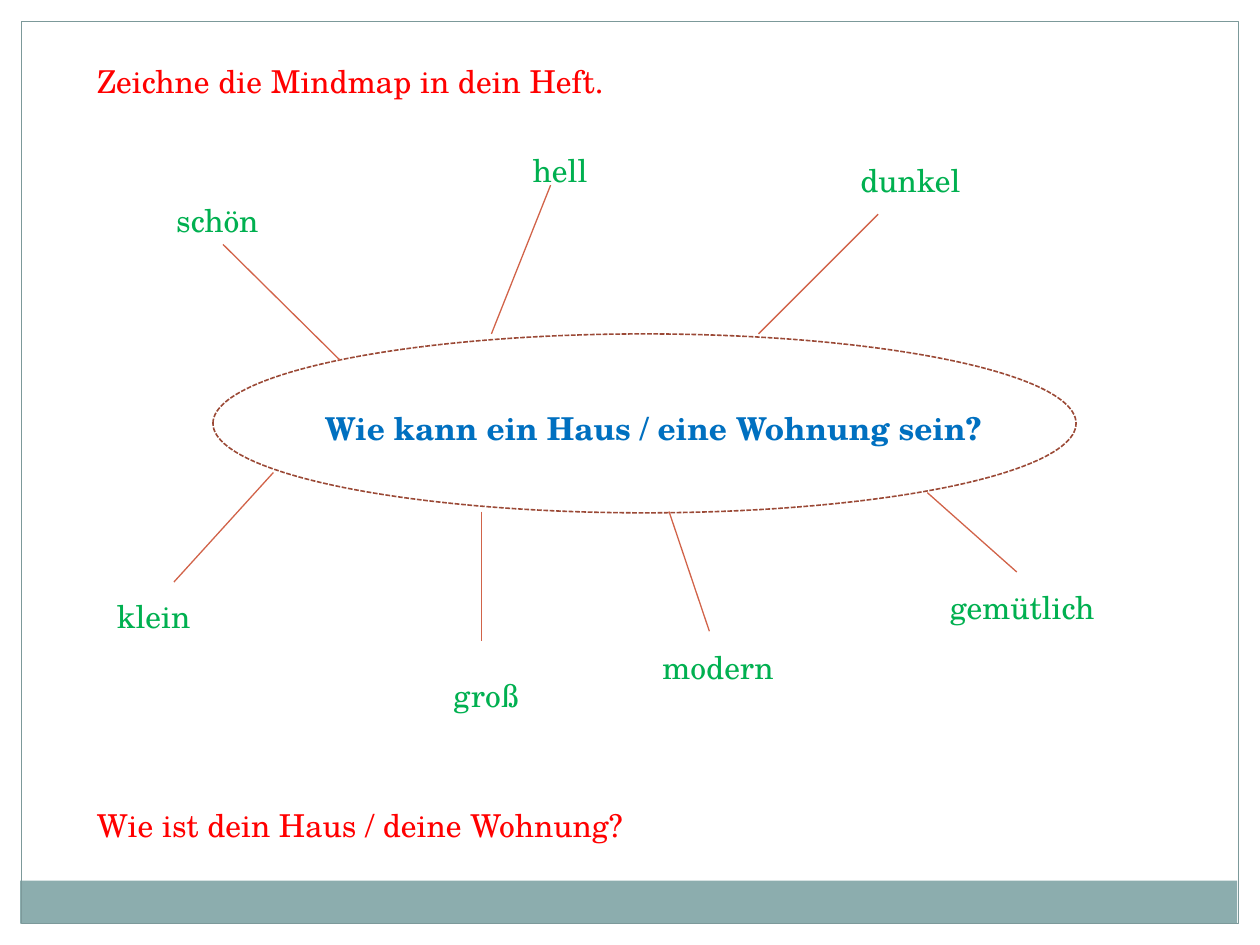
from pptx import Presentation
from pptx import util as u
from pptx.dml.color import RGBColor
from pptx.enum import dml, shapes, text
from pptx.oxml.ns import qn
from lxml import etree

FRAME, BAND = "7C999A", "8CADAE"
OVAL, BRANCH = "9B4936", "D16349"
TASK, TOPIC, WORD = "FF0000", "0070C0", "00B050"


def color(value):
    return RGBColor.from_string(value)


def write(shape, content, size=18, fill="000000", bold=False, font="TeX Gyre Schola"):
    """Put one left-aligned line of formatted text into a shape."""
    tf = shape.text_frame
    tf.word_wrap = True
    tf.auto_size = text.MSO_AUTO_SIZE.SHAPE_TO_FIT_TEXT
    tf.vertical_anchor = text.MSO_ANCHOR.TOP
    p = tf.paragraphs[0]
    p.alignment = text.PP_ALIGN.LEFT
    r = p.add_run()
    r.text = content
    r.font.name, r.font.size, r.font.bold = font, u.Pt(size), bold
    r.font.color.rgb = color(fill)


class MindMap:
    line_width = 0.75
    text_height = 0.4

    def __init__(self, slide):
        self.s = slide

    def title(self, content, left, top, width, **fmt):
        sp = self.s.shapes.title
        sp.left, sp.top = u.Inches(left), u.Inches(top)
        sp.width, sp.height = u.Inches(width), u.Inches(self.text_height)
        write(sp, content, **fmt)

    def label(self, content, left, top, width, **fmt):
        sp = self.s.shapes.add_textbox(u.Inches(left), u.Inches(top),
                                       u.Inches(width), u.Inches(self.text_height))
        write(sp, content, **fmt)

    def shape(self, kind, box, fill=None, line=None, width=line_width, dash=None):
        sp = self.s.shapes.add_shape(kind, *map(u.Inches, box))
        sp.shadow.inherit = False
        if fill:
            sp.fill.solid()
            sp.fill.fore_color.rgb = color(fill)
        else:
            sp.fill.background()
        if line:
            sp.line.color.rgb = color(line)
            sp.line.width = u.Pt(width)
            sp.line.dash_style = dash
        else:
            sp.line.fill.background()

    def branch(self, start, end):
        line = self.s.shapes.add_connector(shapes.MSO_CONNECTOR.STRAIGHT,
                                           *map(u.Inches, start + end))
        line.line.color.rgb = color(BRANCH)
        line.line.width = u.Pt(self.line_width)
        etree.SubElement(line._element.spPr, qn("a:effectLst"))


def main():
    prs = Presentation()
    prs.slide_width, prs.slide_height = u.Inches(10), u.Inches(7.5)
    m = MindMap(prs.slides.add_slide(prs.slide_layouts[5]))

    # Page frame with its bottom band
    rect = shapes.MSO_SHAPE.RECTANGLE
    m.shape(rect, (0.16, 6.99, 9.66, 0.34), fill=BAND)
    m.shape(rect, (0.17, 0.17, 9.66, 7.16), line=FRAME)

    # Central topic
    m.shape(shapes.MSO_SHAPE.OVAL, (1.69, 2.65, 6.85, 1.42), line=OVAL,
            width=0.9, dash=dml.MSO_LINE.SQUARE_DOT)
    m.label("Wie kann ein Haus / eine Wohnung sein?", 2.48, 3.2, 5.67,
            fill=TOPIC, bold=True)

    # Words around it: label left, top, width, then branch from oval to word
    words = [
        ("schön", 1.3, 1.55, 1.65, (2.7, 2.86), (1.77, 1.94)),
        ("hell", 4.13, 1.15, 1.1, (3.9, 2.65), (4.37, 1.47)),
        ("dunkel", 6.73, 1.23, 1.5, (6.02, 2.65), (6.97, 1.7)),
        ("klein", 0.83, 4.69, 1.26, (2.17, 3.75), (1.38, 4.62)),
        ("groß", 3.5, 5.32, 1.18, (3.82, 4.06), (3.82, 5.09)),
        ("modern", 5.16, 5.09, 1.34, (5.31, 4.06), (5.63, 5.01)),
        ("gemütlich", 7.44, 4.62, 1.89, (7.36, 3.91), (8.07, 4.54)),
    ]
    for word, left, top, width, start, end in words:
        m.branch(start, end)
        m.label(word, left, top, width, fill=WORD)

    # Task and closing question
    m.title("Zeichne die Mindmap in dein Heft.", 0.67, 0.44, 5.04, fill=TASK)
    m.label("Wie ist dein Haus / deine Wohnung?", 0.67, 6.35, 5.51, fill=TASK)

    prs.save("out.pptx")


if __name__ == "__main__":
    main()
